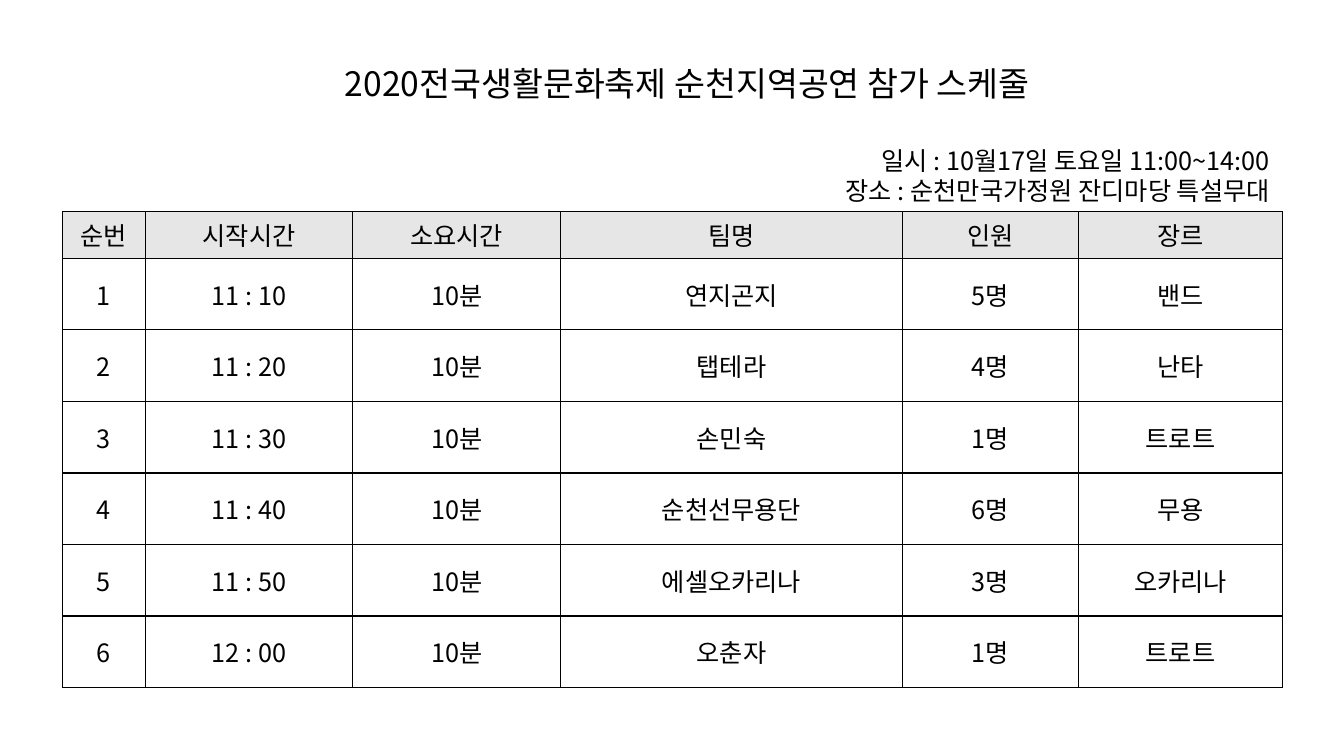
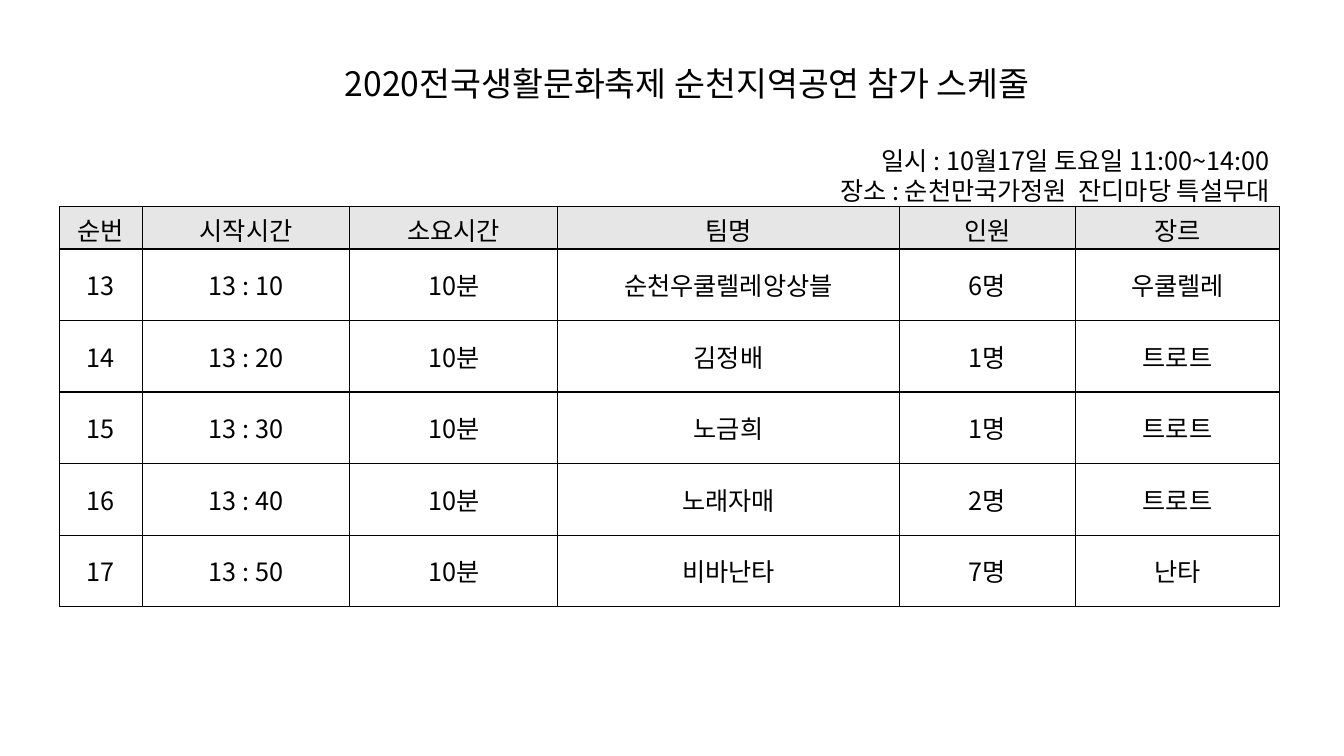
from pptx import Presentation
from pptx.dml.color import RGBColor
from pptx.enum.text import MSO_ANCHOR, MSO_AUTO_SIZE, PP_ALIGN
from pptx.oxml.ns import qn
from pptx.oxml.xmlchemy import OxmlElement
from pptx.util import Inches, Pt

CENTER, RIGHT = PP_ALIGN.CENTER, PP_ALIGN.RIGHT
TOP, MIDDLE = MSO_ANCHOR.TOP, MSO_ANCHOR.MIDDLE
BLACK = RGBColor(0x00, 0x00, 0x00)
HEADER_GRAY = RGBColor(0xE7, 0xE6, 0xE6)
FONT = "Noto Sans CJK KR"

# Shared wording and table grid
TITLE = "2020전국생활문화축제 순천지역공연 참가 스케줄"
DATE = "일시 : 10월17일 토요일 11:00~14:00"
HEADERS = ["순번", "시작시간", "소요시간", "팀명", "인원", "장르"]
COLUMN_WIDTHS = [0.82, 2.06, 2.06, 3.39, 1.75, 2.02]
HEADER_HEIGHT, ROW_HEIGHT = 0.42, 0.71
OPENING_MINUTE, SLOT_MINUTES = 11 * 60, 10

# Per slide: venue line, table left and top, first number, (team, people, genre)
PAGES = [
    ("장소 : 순천만국가정원 잔디마당 특설무대", 0.62, 2.1, 1, [
        ("연지곤지", 5, "밴드"),
        ("탭테라", 4, "난타"),
        ("손민숙", 1, "트로트"),
        ("순천선무용단", 6, "무용"),
        ("에셀오카리나", 3, "오카리나"),
        ("오춘자", 1, "트로트"),
    ]),
    ("장소 : 순천만국가정원  잔디마당 특설무대", 0.59, 2.05, 13, [
        ("순천우쿨렐레앙상블", 6, "우쿨렐레"),
        ("김정배", 1, "트로트"),
        ("노금희", 1, "트로트"),
        ("노래자매", 2, "트로트"),
        ("비바난타", 7, "난타"),
    ]),
]


def write_lines(frame, lines, size, align):
    """Fill a text frame with one paragraph per line."""
    frame.text = "\n".join(lines)
    for para in frame.paragraphs:
        para.alignment = align
        para.font.size = Pt(size)
        para.font.color.rgb = BLACK
        para.font.name = FONT
        east_asian = OxmlElement("a:ea")
        east_asian.set("typeface", FONT)
        para._p.pPr.find(qn("a:defRPr")).append(east_asian)


def add_borders(cell):
    """Draw a thin black line on all four sides; call before setting the fill."""
    properties = cell._tc.get_or_add_tcPr()
    for side in ("a:lnL", "a:lnR", "a:lnT", "a:lnB"):
        line = OxmlElement(side)
        line.set("w", str(Pt(1)))
        fill = OxmlElement("a:solidFill")
        color = OxmlElement("a:srgbClr")
        color.set("val", str(BLACK))
        fill.append(color)
        line.append(fill)
        properties.append(line)


deck = Presentation()
deck.slide_width, deck.slide_height = Inches(13.33), Inches(7.5)

for venue, left, top, first_number, acts in PAGES:
    page = deck.slides.add_slide(deck.slide_layouts[6])

    # Schedule rows: every act has one ten-minute slot
    rows = [HEADERS]
    for number, (team, people, genre) in enumerate(acts, first_number):
        hour, minute = divmod(OPENING_MINUTE + number * SLOT_MINUTES, 60)
        rows.append([str(number), f"{hour} : {minute:02}", f"{SLOT_MINUTES}분",
                     team, f"{people}명", genre])

    # Table
    height = HEADER_HEIGHT + ROW_HEIGHT * len(acts)
    table = page.shapes.add_table(
        len(rows), len(HEADERS), Inches(left), Inches(top),
        Inches(sum(COLUMN_WIDTHS)), Inches(height)).table
    table.horz_banding = False
    for column, width in zip(table.columns, COLUMN_WIDTHS):
        column.width = Inches(width)
    for row_index, row in enumerate(rows):
        is_header = row_index == 0
        table.rows[row_index].height = Inches(HEADER_HEIGHT if is_header else ROW_HEIGHT)
        for column_index, text in enumerate(row):
            cell = table.cell(row_index, column_index)
            write_lines(cell.text_frame, [text], 18, CENTER)
            cell.vertical_anchor = TOP if is_header else MIDDLE
            add_borders(cell)
            if is_header:
                cell.fill.solid()
                cell.fill.fore_color.rgb = HEADER_GRAY
            else:
                cell.fill.background()

    # Title, then date and venue
    for place, lines, size, align in [
        ((2.83, 0.58, 7.97, 0.5), [TITLE], 24, CENTER),
        ((7.6, 1.39, 5.09, 0.71), [DATE, venue], 18, RIGHT),
    ]:
        box = page.shapes.add_textbox(*map(Inches, place))
        box.text_frame.word_wrap = True
        box.text_frame.auto_size = MSO_AUTO_SIZE.SHAPE_TO_FIT_TEXT
        write_lines(box.text_frame, lines, size, align)

deck.save("out.pptx")
